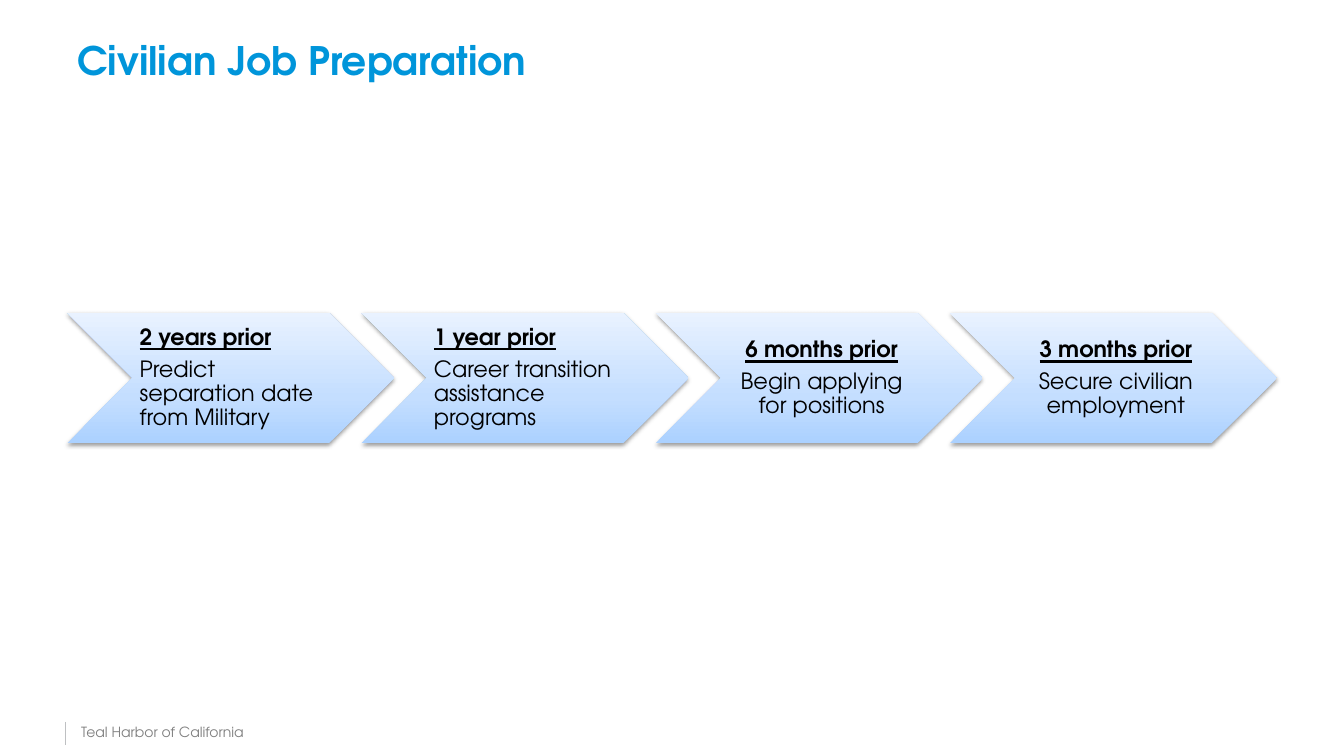
from copy import deepcopy
from dataclasses import dataclass

from lxml import etree
from pptx import Presentation
from pptx import util as u
from pptx.dml import color
from pptx.enum import shapes, text
from pptx.oxml import ns

FONT = "TeX Gyre Adventor"
GRADIENT = ((0, "ABD1FF"), (0.35, "C4DEFF"), (1, "E9F2FF"))
SLIDE_WIDTH = u.Inches(13.333)
SLIDE_HEIGHT = u.Inches(7.5)
MARGIN = 0.05
OVERLAP = 0.1
TEXT_INDENT = 0.2


@dataclass
class Area:
    left: float
    top: float
    width: float
    height: float

    def lengths(self) -> tuple[int, int, int, int]:
        return (
            round(self.left * SLIDE_WIDTH),
            round(self.top * SLIDE_HEIGHT),
            round(self.width * SLIDE_WIDTH),
            round(self.height * SLIDE_HEIGHT),
        )


@dataclass
class Stage:
    heading: str
    task: str
    alignment: text.PP_ALIGN


STAGES = [
    Stage("2 years prior", "Predict separation date from Military", text.PP_ALIGN.LEFT),
    Stage("1 year prior", "Career transition assistance programs", text.PP_ALIGN.LEFT),
    Stage("6 months prior", "Begin applying for positions", text.PP_ALIGN.CENTER),
    Stage("3 months prior", "Secure civilian employment", text.PP_ALIGN.CENTER),
]


def rgb(value: str) -> color.RGBColor:
    return color.RGBColor.from_string(value)


def format_text(para, size: float, hex_color: str, bold: bool = False, underline: bool = False) -> None:
    for span in para.runs:
        span.font.name = FONT
        span.font.size = u.Pt(size)
        span.font.color.rgb = rgb(hex_color)
        span.font.bold = bold
        span.font.underline = underline


def add_shadow(shape) -> None:
    shape.shadow.inherit = False
    effects = shape._element.spPr.find(ns.qn("a:effectLst"))
    shadow = etree.SubElement(
        effects, ns.qn("a:outerShdw"), blurRad=str(u.Pt(3.1)), dist=str(u.Pt(1.6)),
        dir="5400000", rotWithShape="0",
    )
    shade = etree.SubElement(shadow, ns.qn("a:srgbClr"), val="000000")
    etree.SubElement(shade, ns.qn("a:alpha"), val="38000")


def add_gradient(shape) -> None:
    shape.fill.gradient()
    shape.fill.gradient_angle = 90
    stops = shape._element.spPr.find(".//" + ns.qn("a:gsLst"))
    stops.insert(1, deepcopy(stops[0]))
    for stop, (position, hex_color) in zip(shape.fill.gradient_stops, GRADIENT):
        stop.position = position
        stop.color.rgb = rgb(hex_color)


def add_title(page, wording: str) -> None:
    title = page.shapes.title
    title.left, title.top, title.width, title.height = Area(MARGIN, 0.04, 0.9, 0.087).lengths()
    frame = title.text_frame
    frame.text = wording
    frame.vertical_anchor = text.MSO_ANCHOR.MIDDLE
    para = frame.paragraphs[0]
    para.alignment = text.PP_ALIGN.LEFT
    para.line_spacing = 0.9
    format_text(para, 28, "0095DA", bold=True)


def add_footer(page, wording: str) -> None:
    left, top, _, height = Area(0.049, 0.955, 0, 0.03).lengths()
    rule = page.shapes.add_connector(shapes.MSO_CONNECTOR.STRAIGHT, left, top, left, top + height)
    rule.line.color.rgb = rgb("BEC0C2")
    rule.line.width = u.Pt(0.5)
    etree.SubElement(rule._element.spPr, ns.qn("a:effectLst"))
    box = page.shapes.add_textbox(*Area(0.053, 0.951, 0.215, 0.036).lengths())
    frame = box.text_frame
    frame.word_wrap = True
    frame.auto_size = text.MSO_AUTO_SIZE.SHAPE_TO_FIT_TEXT
    frame.text = wording
    format_text(frame.paragraphs[0], 10, "808080")


def add_stage(page, stage: Stage, area: Area) -> None:
    chevron = page.shapes.add_shape(shapes.MSO_SHAPE.CHEVRON, *area.lengths())
    add_gradient(chevron)
    chevron.line.fill.background()
    add_shadow(chevron)

    indent = TEXT_INDENT * area.width
    text_area = Area(area.left + indent, area.top, area.width - 2 * indent, area.height)
    box = page.shapes.add_textbox(*text_area.lengths())
    frame = box.text_frame
    frame.word_wrap = True
    frame.vertical_anchor = text.MSO_ANCHOR.MIDDLE
    frame.margin_left = u.Inches(0.07)
    frame.margin_top = frame.margin_right = frame.margin_bottom = u.Inches(0.02)
    frame.text = f"{stage.heading}\n{stage.task}"
    for para, is_heading in zip(frame.paragraphs, (True, False)):
        para.alignment = stage.alignment
        para.line_spacing = 0.9
        para.space_after = u.Pt(5.6)
        format_text(para, 16, "000000", bold=is_heading, underline=is_heading)


def main() -> None:
    deck = Presentation()
    deck.slide_width = SLIDE_WIDTH
    deck.slide_height = SLIDE_HEIGHT
    page = deck.slides.add_slide(deck.slide_layouts[5])
    add_footer(page, "Teal Harbor of California")
    add_title(page, "Civilian Job Preparation")

    width = (1 - 2 * MARGIN) / (len(STAGES) - OVERLAP * (len(STAGES) - 1))
    height = 0.4 * width * SLIDE_WIDTH / SLIDE_HEIGHT
    for column, stage in enumerate(STAGES):
        left = MARGIN + column * width * (1 - OVERLAP)
        add_stage(page, stage, Area(left, 0.5 - height / 2, width, height))
    deck.save("out.pptx")


if __name__ == "__main__":
    main()
